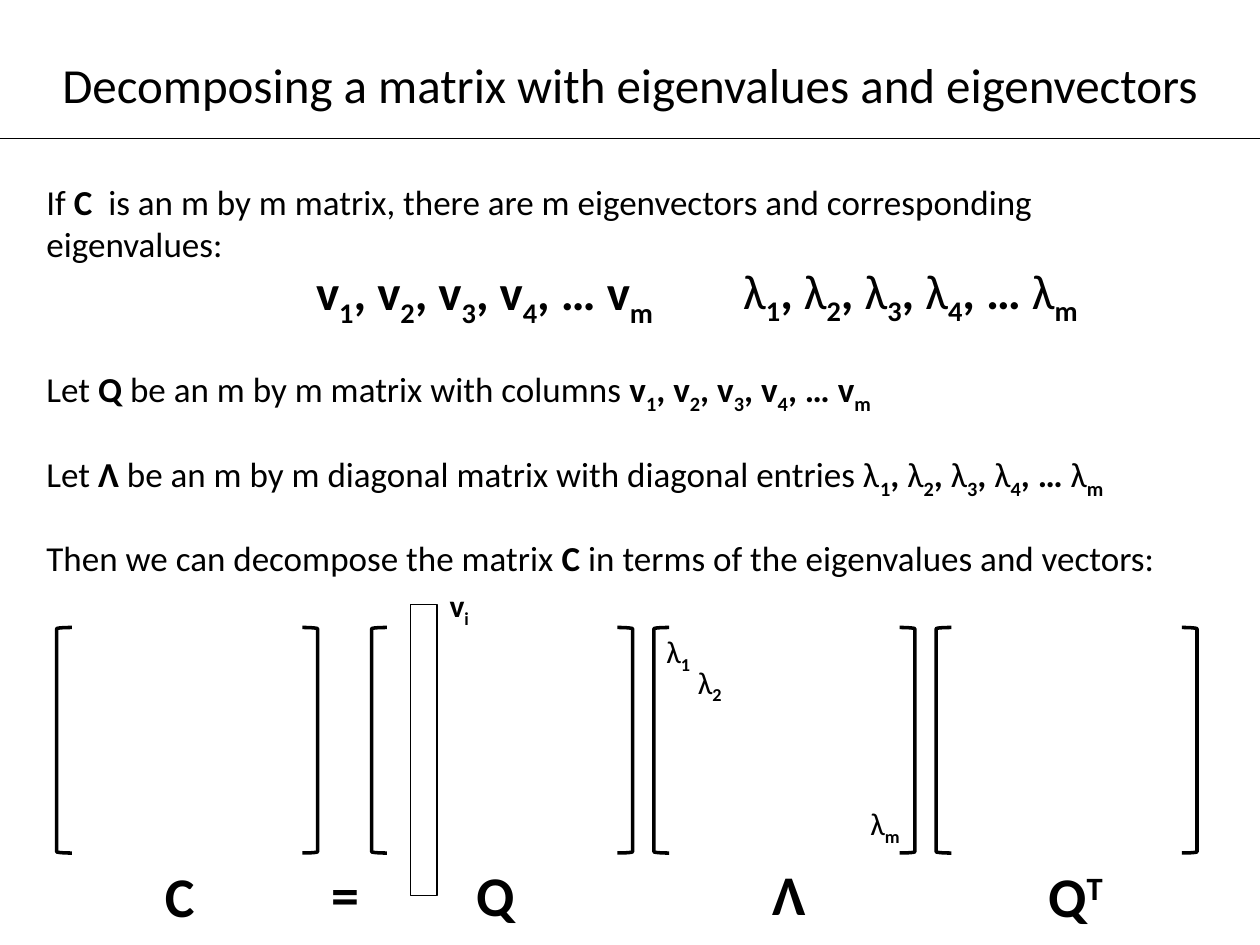
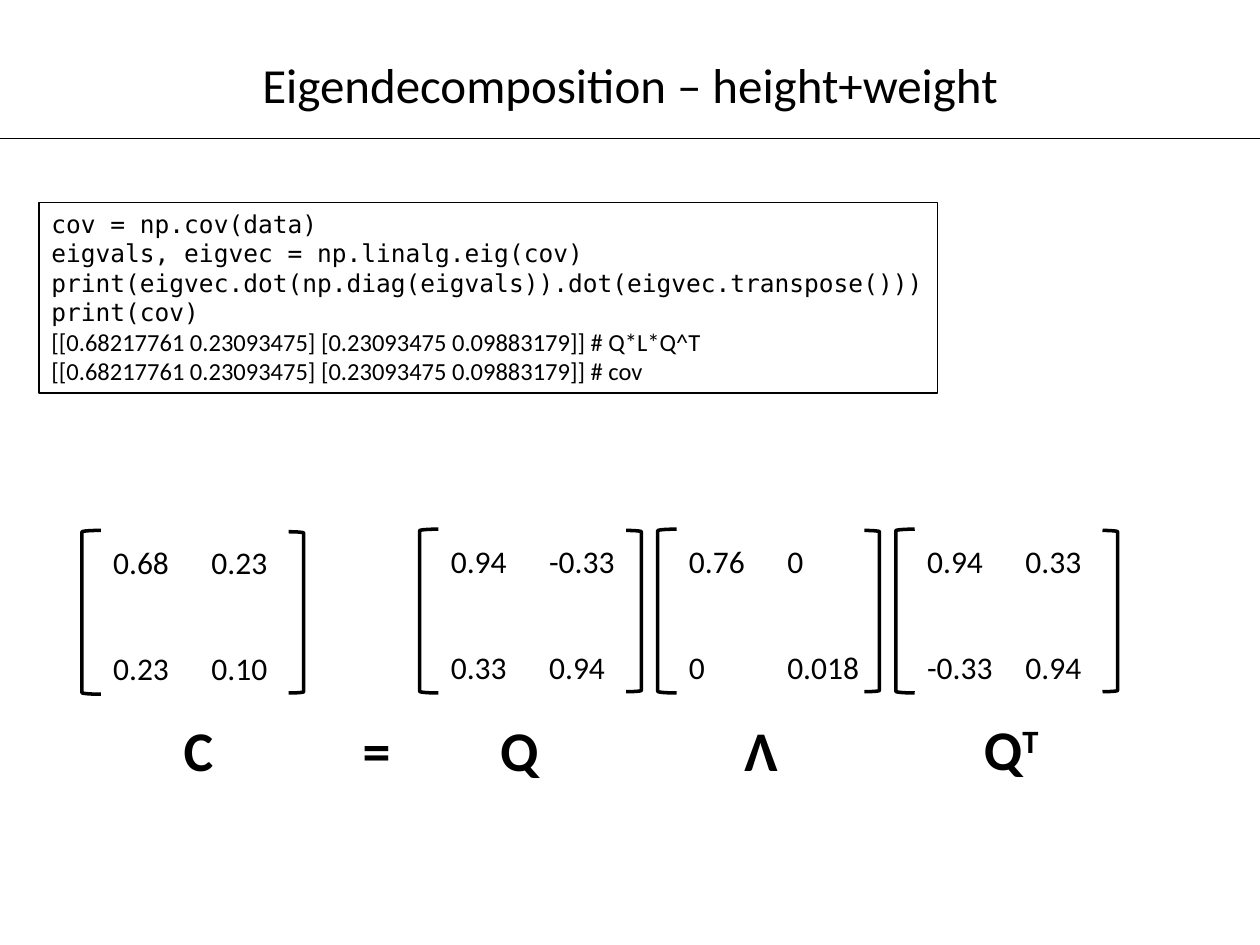
from dataclasses import dataclass
from typing import NamedTuple

from lxml.etree import SubElement
from pptx import Presentation
from pptx.dml.color import RGBColor
from pptx.enum.shapes import MSO_CONNECTOR, MSO_SHAPE
from pptx.enum.text import MSO_AUTO_SIZE, PP_ALIGN
from pptx.oxml.ns import qn
from pptx.shapes.autoshape import Shape
from pptx.slide import Slide
from pptx.util import Emu, Pt

EMU_PER_PX = 9144  # 100 px to the inch
COLORS = {"ink": "000000"}
BODY_FONT = "Calibri"
CODE_FONT = "DejaVu Sans Mono"
SUB, SUPER = -25, 30
BRACKET_WIDTH = 12
CELL_STEP_X, CELL_STEP_Y = 78, 84


class Run(NamedTuple):
    text: str
    bold: bool = False
    baseline: int = 0
    font: str = BODY_FONT


class Box(NamedTuple):
    left: int
    top: int
    width: int
    height: int


@dataclass
class Text:
    box: Box
    paragraphs: list[list[Run]]
    size: int
    wrap: bool = True
    align: PP_ALIGN = PP_ALIGN.LEFT


@dataclass
class Matrix:
    box: Box
    symbol: list[Run]
    symbol_box: Box
    left_hook: int = BRACKET_WIDTH
    right_inset: int = 0
    entries: tuple[tuple[str, ...], ...] = ()


def px(length: int) -> Emu:
    return Emu(length * EMU_PER_PX)


def ink() -> RGBColor:
    return RGBColor.from_string(COLORS["ink"])


def indexed(symbol: str, index: str, bold: bool = False) -> list[Run]:
    return [Run(symbol, bold), Run(index, True, SUB)]


def series(symbol: str, bold: bool = False) -> list[Run]:
    """Symbol 1 to 4, then symbol m."""
    runs = indexed(symbol, "1", bold)
    for index, separator in (("2", ", "), ("3", ", "), ("4", ", "), ("m", ", … ")):
        runs += [Run(separator, True), *indexed(symbol, index, bold)]
    return runs


def outline(shape: Shape, width: float) -> None:
    shape.line.color.rgb = ink()
    shape.line.width = Pt(width)


def add_text(slide: Slide, text: Text) -> Shape:
    textbox = slide.shapes.add_textbox(*map(px, text.box))
    frame = textbox.text_frame
    frame.word_wrap = text.wrap
    frame.auto_size = MSO_AUTO_SIZE.SHAPE_TO_FIT_TEXT
    for number, runs in enumerate(text.paragraphs):
        paragraph = frame.add_paragraph() if number else frame.paragraphs[0]
        paragraph.alignment = text.align
        for part in runs:
            run = paragraph.add_run()
            run.text = part.text
            run.font.size = Pt(text.size)
            run.font.name = part.font
            run.font.bold = part.bold
            run.font.color.rgb = ink()
            if part.baseline:
                run._r.get_or_add_rPr().set("baseline", str(part.baseline * 1000))
    return textbox


def add_outline_shape(slide: Slide, kind: MSO_SHAPE, box: Box, line: float) -> None:
    shape = slide.shapes.add_shape(kind, *map(px, box))
    shape.shadow.inherit = False
    shape.fill.background()
    outline(shape, line)


def add_matrix(slide: Slide, matrix: Matrix) -> None:
    left, top, width, height = matrix.box
    inset = matrix.right_inset
    opening = Box(left, top, matrix.left_hook, height)
    closing = Box(left + width - BRACKET_WIDTH, top + inset, BRACKET_WIDTH, height - 2 * inset)
    add_outline_shape(slide, MSO_SHAPE.LEFT_BRACKET, opening, 2)
    add_outline_shape(slide, MSO_SHAPE.RIGHT_BRACKET, closing, 2)
    for row, values in enumerate(matrix.entries):
        for column, value in enumerate(values):
            cell = Box(left + 15 + column * CELL_STEP_X, top + 5 + row * CELL_STEP_Y, 100, 40)
            add_text(slide, Text(cell, [[Run(value)]], 18))
    add_text(slide, Text(matrix.symbol_box, [matrix.symbol], 32, wrap=False))


def add_titled_slide(deck: Presentation, title: str) -> Slide:
    slide = deck.slides.add_slide(deck.slide_layouts[6])
    add_text(slide, Text(Box(0, 38, 1000, 57), [[Run(title)]], 28, align=PP_ALIGN.CENTER))
    rule = slide.shapes.add_connector(MSO_CONNECTOR.STRAIGHT, px(0), px(110), px(1000), px(110))
    outline(rule, 0.75)
    SubElement(rule._element.spPr, qn("a:effectLst"))
    return slide


SYMBOL_C = [Run("C", True)]
SYMBOL_Q = [Run("Q", True)]
SYMBOL_LAMBDA = [Run("Λ", True)]
SYMBOL_QT = [Run("Q", True), Run("T", True, SUPER)]
EQUALS = [[Run("=", True)]]


def build_theory(deck: Presentation) -> None:
    slide = add_titled_slide(deck, "Decomposing a matrix with eigenvalues and eigenvectors")

    # Statements, with the two series between them
    statements = [
        Text(Box(27, 138, 852, 77), [[
            Run("If "), Run("C ", True),
            Run(" is an m by m matrix, there are m eigenvectors and corresponding eigenvalues:"),
        ]], 20),
        Text(Box(241, 203, 301, 57), [series("v", True)], 28, wrap=False),
        Text(Box(580, 202, 299, 57), [series("λ")], 28, wrap=False),
        Text(Box(27, 287, 852, 44), [[
            Run("Let "), Run("Q", True), Run(" be an m by m matrix with columns "),
            *series("v", True),
        ]], 20),
        Text(Box(27, 354, 912, 44), [[
            Run("Let "), Run("Λ", True),
            Run(" be an m by m diagonal matrix with diagonal entries "), *series("λ"),
        ]], 20),
        Text(Box(27, 421, 938, 44), [[
            Run("Then we can decompose the matrix "), Run("C ", True),
            Run("in terms of the eigenvalues and vectors:"),
        ]], 20),
    ]
    for statement in statements:
        add_text(slide, statement)

    # Matrix equation
    for left, symbol, symbol_box in (
        (45, SYMBOL_C, Box(121, 679, 44, 64)),
        (295, SYMBOL_Q, Box(368, 678, 51, 64)),
        (519, SYMBOL_LAMBDA, Box(603, 677, 47, 64)),
        (743, SYMBOL_QT, Box(822, 679, 65, 64)),
    ):
        add_matrix(slide, Matrix(Box(left, 498, 207, 179), symbol, symbol_box))
    add_text(slide, Text(Box(253, 677, 43, 64), EQUALS, 32, wrap=False))

    # Eigenvector column and diagonal entries
    add_outline_shape(slide, MSO_SHAPE.RECTANGLE, Box(326, 480, 21, 231), 0.75)
    for box, runs in (
        (Box(347, 460, 37, 40), indexed("v", "i", True)),
        (Box(519, 497, 40, 40), indexed("λ", "1")),
        (Box(544, 521, 40, 40), indexed("λ", "2")),
        (Box(681, 633, 46, 40), indexed("λ", "m")),
    ):
        add_text(slide, Text(box, [runs], 18, wrap=False))


def build_example(deck: Presentation) -> None:
    slide = add_titled_slide(deck, "Eigendecomposition – height+weight")

    # Code and its output
    code = (
        "cov = np.cov(data)",
        "eigvals, eigvec = np.linalg.eig(cov)",
        "print(eigvec.dot(np.diag(eigvals)).dot(eigvec.transpose()))",
        "print(cov)",
    )
    output = (
        "[[0.68217761 0.23093475] [0.23093475 0.09883179]] # Q*L*Q^T",
        "[[0.68217761 0.23093475] [0.23093475 0.09883179]] # cov",
    )
    lines = [[Run(line, font=CODE_FONT)] for line in code] + [[Run(line)] for line in output]
    listing = add_text(slide, Text(Box(31, 161, 713, 151), lines, 14, wrap=False))
    outline(listing, 0.75)

    # Matrix equation with numbers
    for left, top, symbol, symbol_box, entries in (
        (65, 421, SYMBOL_C, Box(136, 563, 44, 64), (("0.68", "0.23"), ("0.23", "0.10"))),
        (333, 420, SYMBOL_Q, Box(387, 563, 51, 64), (("0.94", "-0.33"), ("0.33", "0.94"))),
        (522, 420, SYMBOL_LAMBDA, Box(581, 563, 47, 64), (("0.76", "0"), ("0", "0.018"))),
        (711, 420, SYMBOL_QT, Box(771, 562, 65, 64), (("0.94", "0.33"), ("-0.33", "0.94"))),
    ):
        add_matrix(slide, Matrix(Box(left, top, 176, 130), symbol, symbol_box,
                                 left_hook=15, right_inset=1, entries=entries))
    add_text(slide, Text(Box(278, 563, 43, 64), EQUALS, 32, wrap=False))


def main() -> None:
    deck = Presentation()
    deck.slide_width, deck.slide_height = px(1000), px(750)
    build_theory(deck)
    build_example(deck)
    deck.save("out.pptx")


if __name__ == "__main__":
    main()
